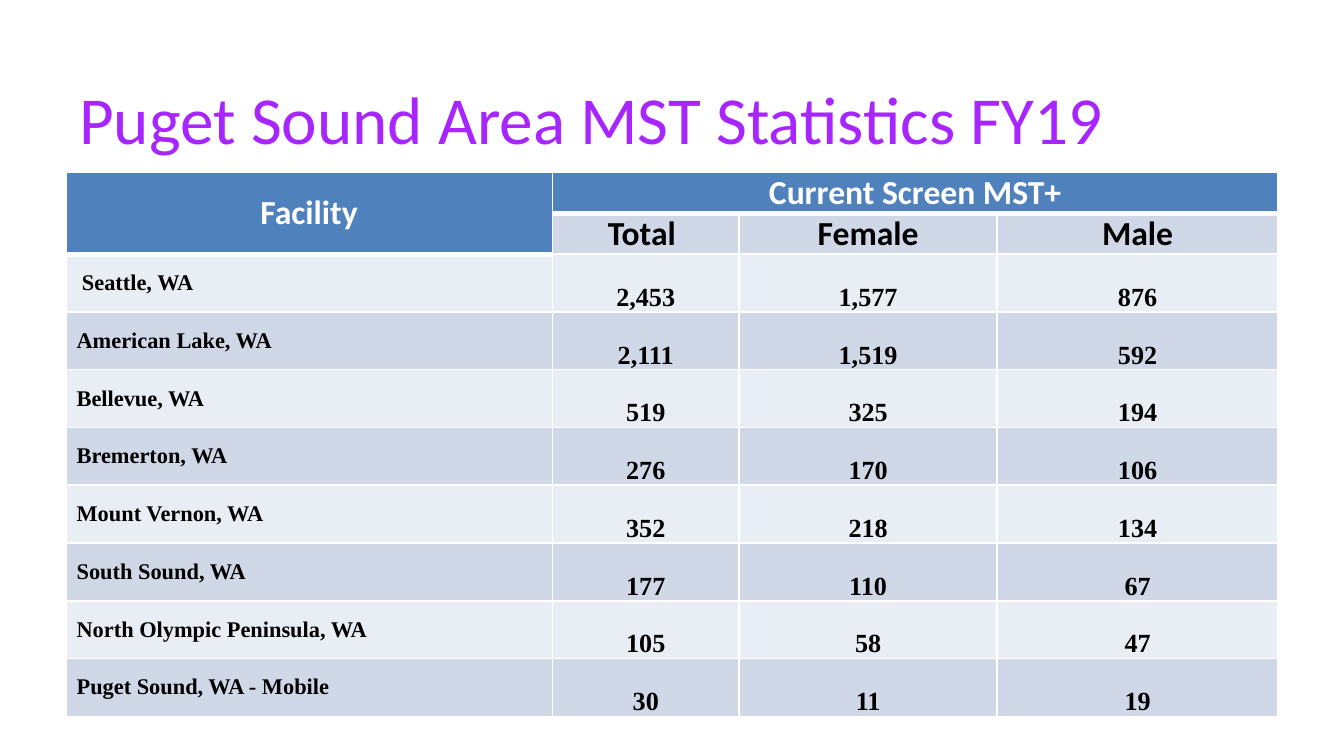
from dataclasses import dataclass

from lxml import etree
from pptx import Presentation
from pptx.dml.color import RGBColor
from pptx.enum.text import MSO_ANCHOR, PP_ALIGN
from pptx.oxml.ns import qn
from pptx.util import Inches, Pt

LEFT, CENTER = PP_ALIGN.LEFT, PP_ALIGN.CENTER
MIDDLE, BOTTOM = MSO_ANCHOR.MIDDLE, MSO_ANCHOR.BOTTOM
TITLE_ONLY = 5


@dataclass(frozen=True)
class Theme:
    title: str = "A725FF"
    header: str = "4F81BD"
    dark_band: str = "D0D8E8"
    light_band: str = "E9EDF4"
    rule: str = "FFFFFF"
    header_text: str = "FFFFFF"
    body_text: str = "000000"
    heading_font: str = "Calibri"
    body_font: str = "Times New Roman"
    title_size: int = 36
    header_size: int = 18
    count_size: int = 14
    facility_size: int = 12
    thin: int = 1
    thick: int = 3


@dataclass(frozen=True)
class CellStyle:
    fill: str
    color: str
    font: str
    size: int
    align: PP_ALIGN = CENTER
    anchor: MSO_ANCHOR = MIDDLE
    indent: float = 0


@dataclass(frozen=True)
class Facility:
    name: str
    female: int
    male: int
    indent: float = 0.08

    @property
    def counts(self) -> tuple[int, int, int]:
        return self.female + self.male, self.female, self.male


THEME = Theme()
SLIDE_WIDTH = 10
SLIDE_HEIGHT = SLIDE_WIDTH * 9 / 16
MARGIN = 0.49
TITLE_TOP, TITLE_HEIGHT = 0.47, 0.81
CONTENT_WIDTH = SLIDE_WIDTH - 2 * MARGIN
COLUMN_WIDTHS = (3.62, 1.39, 1.92, 2.09)
HEADER_ROWS, HEADER_HEIGHT, BODY_HEIGHT = 2, 0.3, 0.43

FACILITIES = (
    Facility("Seattle, WA", 1577, 876, indent=0.12),
    Facility("American Lake, WA", 1519, 592),
    Facility("Bellevue, WA", 325, 194),
    Facility("Bremerton, WA", 170, 106),
    Facility("Mount Vernon, WA", 218, 134),
    Facility("South Sound, WA", 110, 67),
    Facility("North Olympic Peninsula, WA", 58, 47),
    Facility("Puget Sound, WA - Mobile", 11, 19),
)


def set_font(paragraph, name: str, size: int, color: str, bold: bool) -> None:
    font = paragraph.font
    font.name, font.size, font.bold = name, Pt(size), bold
    font.color.rgb = RGBColor.from_string(color)


def write_cell(cell, text: str, style: CellStyle) -> None:
    cell.text = text
    cell.vertical_anchor = style.anchor
    cell.margin_left = Inches(style.indent)
    cell.margin_right = cell.margin_top = cell.margin_bottom = 0
    cell.fill.solid()
    cell.fill.fore_color.rgb = RGBColor.from_string(style.fill)
    paragraph = cell.text_frame.paragraphs[0]
    paragraph.alignment = style.align
    set_font(paragraph, style.font, style.size, style.color, bold=True)


def rule_cell(cell, top: int, bottom: int) -> None:
    """Draw the four borders; they must precede the fill in the cell properties."""
    widths = {"a:lnL": THEME.thin, "a:lnR": THEME.thin, "a:lnT": top, "a:lnB": bottom}
    properties = cell._tc.get_or_add_tcPr()
    for position, (tag, width) in enumerate(widths.items()):
        line = etree.Element(qn(tag), w=str(Pt(width)))
        fill = etree.SubElement(line, qn("a:solidFill"))
        etree.SubElement(fill, qn("a:srgbClr"), val=THEME.rule)
        properties.insert(position, line)


def add_title(slide, text: str) -> None:
    title = slide.shapes.title
    title.left, title.top = Inches(MARGIN), Inches(TITLE_TOP)
    title.width, title.height = Inches(CONTENT_WIDTH), Inches(TITLE_HEIGHT)
    title.text_frame.text = text
    title.text_frame.vertical_anchor = MIDDLE
    paragraph = title.text_frame.paragraphs[0]
    paragraph.alignment = LEFT
    set_font(paragraph, THEME.heading_font, THEME.title_size, THEME.title, bold=False)


def write_header(table) -> None:
    group = CellStyle(THEME.header, THEME.header_text, THEME.heading_font, THEME.header_size)
    column = CellStyle(THEME.dark_band, THEME.body_text, THEME.heading_font, THEME.header_size)
    table.cell(0, 0).merge(table.cell(1, 0))
    table.cell(0, 1).merge(table.cell(0, 3))
    write_cell(table.cell(0, 0), "Facility", group)
    write_cell(table.cell(0, 1), "Current Screen MST+", group)
    for index, label in enumerate(("Total ", "Female", "Male"), start=1):
        write_cell(table.cell(1, index), label, column)


def write_facility(table, row: int, facility: Facility) -> None:
    band = THEME.dark_band if row % 2 else THEME.light_band
    name_style = CellStyle(band, THEME.body_text, THEME.body_font, THEME.facility_size,
                           align=LEFT, indent=facility.indent)
    count_style = CellStyle(band, THEME.body_text, THEME.body_font, THEME.count_size,
                            anchor=BOTTOM)
    write_cell(table.cell(row, 0), facility.name, name_style)
    for index, count in enumerate(facility.counts, start=1):
        write_cell(table.cell(row, index), f"{count:,}", count_style)


def add_statistics(slide) -> None:
    rows = HEADER_ROWS + len(FACILITIES)
    heights = [HEADER_HEIGHT] * HEADER_ROWS + [BODY_HEIGHT] * len(FACILITIES)
    table = slide.shapes.add_table(
        rows, len(COLUMN_WIDTHS), Inches(MARGIN), Inches(TITLE_TOP + TITLE_HEIGHT),
        Inches(CONTENT_WIDTH), Inches(sum(heights))).table
    for column, width in zip(table.columns, COLUMN_WIDTHS):
        column.width = Inches(width)
    for row, height in zip(table.rows, heights):
        row.height = Inches(height)

    write_header(table)
    for row, facility in enumerate(FACILITIES, start=HEADER_ROWS):
        write_facility(table, row, facility)

    for row in range(rows):
        for column in range(len(COLUMN_WIDTHS)):
            header_end = 1 if column == 0 else 0
            rule_cell(table.cell(row, column),
                      top=THEME.thick if row == header_end + 1 else THEME.thin,
                      bottom=THEME.thick if row == header_end else THEME.thin)


def main() -> None:
    presentation = Presentation()
    presentation.slide_width = Inches(SLIDE_WIDTH)
    presentation.slide_height = Inches(SLIDE_HEIGHT)
    slide = presentation.slides.add_slide(presentation.slide_layouts[TITLE_ONLY])
    add_title(slide, "Puget Sound Area MST Statistics FY19")
    add_statistics(slide)
    presentation.save("out.pptx")


if __name__ == "__main__":
    main()
